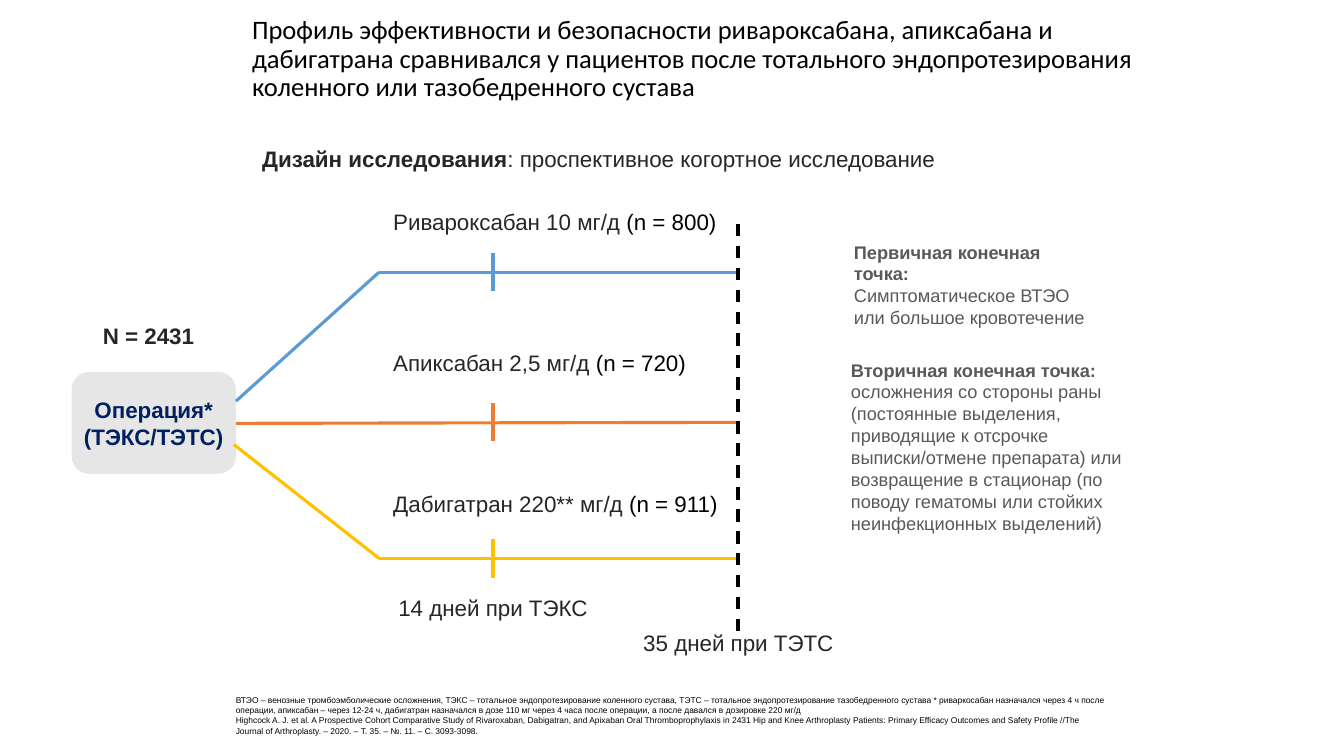
from lxml import etree
from pptx import Presentation
from pptx.dml.color import RGBColor
from pptx.enum.dml import MSO_LINE
from pptx.enum.shapes import MSO_CONNECTOR, MSO_SHAPE
from pptx.enum.text import MSO_ANCHOR, PP_ALIGN
from pptx.oxml.ns import qn
from pptx.util import Inches, Pt

STRAIGHT, ROUNDED, DASH = MSO_CONNECTOR.STRAIGHT, MSO_SHAPE.ROUNDED_RECTANGLE, MSO_LINE.DASH
TOP, MIDDLE = MSO_ANCHOR.TOP, MSO_ANCHOR.MIDDLE
LEFT, CENTER = PP_ALIGN.LEFT, PP_ALIGN.CENTER

# Content: a paragraph is a list of (text, bold, colour) runs
BLACK, INK, GREY, NAVY, PALE = "000000", "262626", "595959", "002060", "E7E6E6"
TITLE = ("Профиль эффективности и безопасности ривароксабана, апиксабана и дабигатрана "
         "сравнивался у пациентов после тотального эндопротезирования коленного или "
         "тазобедренного сустава")
DESIGN = [[("Дизайн исследования", True, INK),
           (": проспективное когортное исследование", False, INK)]]
COHORT = [[("N = 2431", True, INK)]]
SURGERY = [[("Операция*", True, NAVY)], [("(ТЭКС/ТЭТС)", True, NAVY)]]
KNEE_TERM = [[("14 дней при ТЭКС", False, INK)]]
HIP_TERM = [[("35 дней при ТЭТС", False, INK)]]
# drug, group size, colour, start point of the branch, height of the arm, label width
ARMS = [
    ("Ривароксабан 10 мг/д ", "(n = 800)", "5B9BD5", (2.34, 3.98), 2.7, 3.4),
    ("Апиксабан 2,5 мг/д ", "(n = 720)", "ED7D31", (2.34, 4.2), 4.19, 3.09),
    ("Дабигатран 220** мг/д ", "(n = 911)", "FFC000", (2.32, 4.41), 5.54, 3.41),
]
ENDPOINTS = [
    ("Первичная конечная точка:", "Симптоматическое ВТЭО или большое кровотечение",
     (8.4, 2.35, 2.57, 1.17)),
    ("Вторичная конечная точка:",
     "осложнения со стороны раны (постоянные выделения, приводящие к отсрочке "
     "выписки/отмене препарата) или возвращение в стационар (по поводу гематомы или "
     "стойких неинфекционных выделений)", (8.37, 3.52, 3.2, 2.05)),
]
FOOTNOTES = [
    "ВТЭО – венозные тромбоэмболические осложнения, ТЭКС – тотальное эндопротезирование "
    "коленного сустава, ТЭТС – тотальное эндопротезирование тазобедренного сустава * "
    "риваркосабан назначался через 4 ч после операции, апиксабан – через 12-24 ч, "
    "дабигатран назначался в дозе 110 мг через 4 часа после операции, а после давался в "
    "дозировке 220 мг/д",
    "Highcock A. J. et al. A Prospective Cohort Comparative Study of Rivaroxaban, "
    "Dabigatran, and Apixaban Oral Thromboprophylaxis in 2431 Hip and Knee Arthroplasty "
    "Patients: Primary Efficacy Outcomes and Safety Profile //The Journal of Arthroplasty. "
    "– 2020. – Т. 35. – №. 11. – С. 3093-3098.",
]

# Timeline grid, in inches
FORK_X, KNEE_X, HIP_X = 3.76, 4.89, 7.32
TICK = 0.38
LABEL_X, LABEL_Y, LABEL_PITCH, LABEL_H = 3.83, 2.02, 1.4, 0.35
TIGHT, NONE, ROOMY = (0.07, 0.04), (0, 0), (0.1, 0.05)


def rgb(value):
    return RGBColor.from_string(value)


def write(shape, paragraphs, size, font="Arial", align=LEFT, anchor=MIDDLE,
          insets=TIGHT, wrap=True, spacing=1.0):
    frame = shape.text_frame
    side, edge = map(Inches, insets)
    settings = {"word_wrap": wrap, "vertical_anchor": anchor, "margin_left": side,
                "margin_right": side, "margin_top": edge, "margin_bottom": edge}
    for name, value in settings.items():
        setattr(frame, name, value)
    for i, runs in enumerate(paragraphs):
        paragraph = frame.add_paragraph() if i else frame.paragraphs[0]
        paragraph.alignment, paragraph.line_spacing = align, spacing
        for text, bold, colour in runs:
            run = paragraph.add_run()
            run.text = text
            for name, value in {"name": font, "size": Pt(size), "bold": bold}.items():
                setattr(run.font, name, value)
            run.font.color.rgb = rgb(colour)


def text_box(box, paragraphs, size=16, **layout):
    write(slide.shapes.add_textbox(*map(Inches, box)), paragraphs, size, **layout)


def line(start, end, colour, width=2.25, dash=None):
    connector = slide.shapes.add_connector(STRAIGHT, *map(Inches, (*start, *end)))
    connector.line.color.rgb = rgb(colour)
    connector.line.width = Pt(width)
    if dash:
        connector.line.dash_style = dash
    etree.SubElement(connector._element.spPr, qn("a:effectLst"))


prs = Presentation()
prs.slide_width, prs.slide_height = Inches(13.33), Inches(7.5)
slide = prs.slides.add_slide(prs.slide_layouts[5])

# Title and study design
title = slide.shapes.title
title.left, title.top, title.width, title.height = map(Inches, (2.4, 0.11, 9.06, 0.96))
write(title, [[(TITLE, False, BLACK)]], 19, font="Calibri", insets=ROOMY, spacing=0.9)
text_box((2.53, 1.4, 6.91, LABEL_H), DESIGN, wrap=False)

# Starting cohort
surgery = slide.shapes.add_shape(ROUNDED, *map(Inches, (0.72, 3.7, 1.61, 0.99)))
surgery.shadow.inherit = False
surgery.fill.solid()
surgery.fill.fore_color.rgb = surgery.line.color.rgb = rgb(PALE)
surgery.line.width = Pt(1.5)
write(surgery, SURGERY, 16, align=CENTER, insets=NONE)
text_box((0.95, 3.15, 1.29, LABEL_H), COHORT)

# Treatment arms with the knee surgery mark
for row, (drug, group, colour, start, y, width) in enumerate(ARMS):
    if abs(start[1] - y) > TICK:
        line(start, (FORK_X, y), colour)
        line((FORK_X, y), (HIP_X, y), colour)
    else:
        line(start, (HIP_X, y), colour)
    line((KNEE_X, y - TICK / 2), (KNEE_X, y + TICK / 2), colour)
    text_box((LABEL_X, LABEL_Y + row * LABEL_PITCH, width, LABEL_H),
             [[(drug, False, INK), (group, False, BLACK)]], wrap=False)

# Treatment terms
line((HIP_X, 2.22), (HIP_X, 6.3), BLACK, 2.25, DASH)
text_box((3.88, 5.85, 2.05, LABEL_H), KNEE_TERM, wrap=False)
text_box((6.31, 6.2, 2.06, LABEL_H), HIP_TERM, wrap=False)

# Endpoints
for heading, details, box in ENDPOINTS:
    text_box(box, [[(heading, True, GREY)], [(details, False, GREY)]], 13, anchor=TOP)

# Footnotes
text_box((2.24, 6.85, 8.85, 0.5), [[(note, False, BLACK)] for note in FOOTNOTES], 6,
         anchor=TOP, insets=ROOMY)

prs.save("out.pptx")
